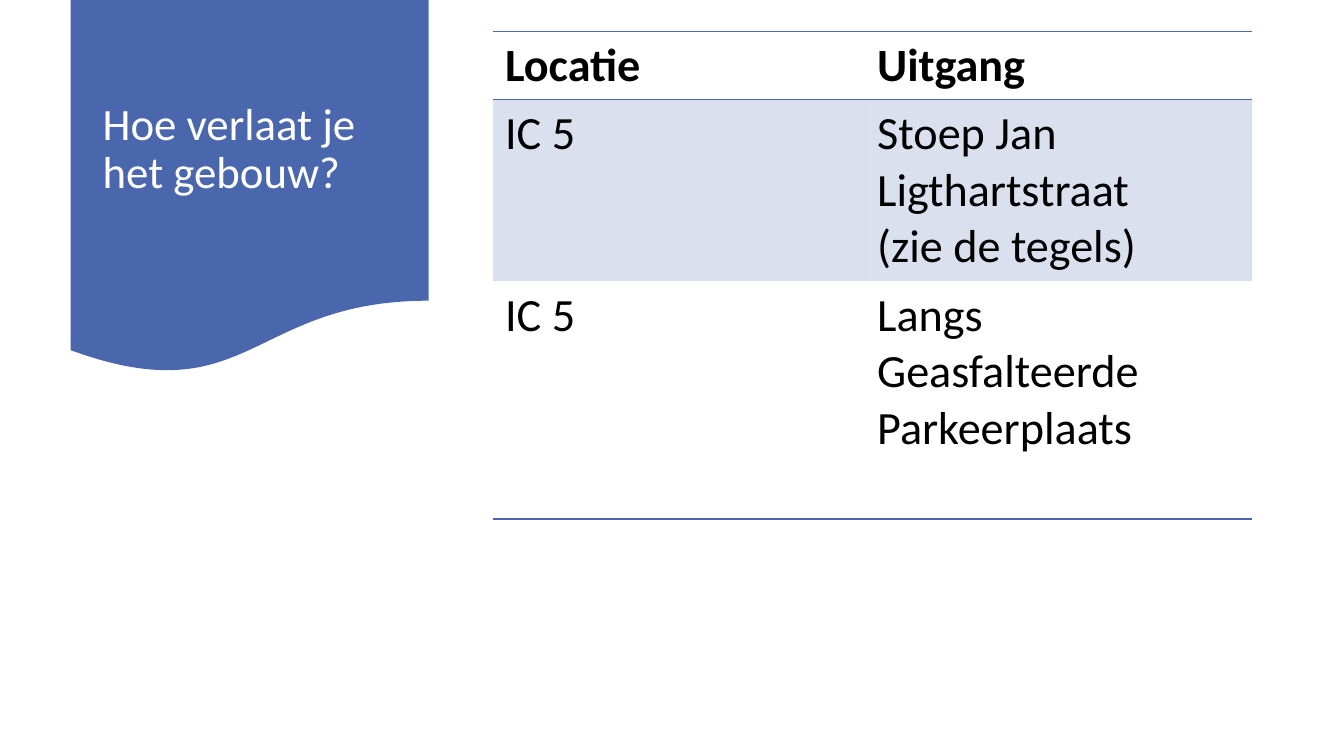
"""Build the slide that tells how to leave the building."""
from dataclasses import dataclass

from lxml import etree
from pptx import Presentation
from pptx.dml.color import RGBColor
from pptx.enum.shapes import MSO_SHAPE
from pptx.enum.text import MSO_ANCHOR
from pptx.oxml.ns import qn
from pptx.slide import Slide
from pptx.table import _Cell
from pptx.text.text import TextFrame
from pptx.util import Emu, Pt

SCALE = 9144
FONT = "Calibri"
NO_STYLE = "{2D5ABB26-0587-4C30-8999-92F81FD0307C}"
WAVE = MSO_SHAPE.FLOWCHART_DOCUMENT
MIDDLE = MSO_ANCHOR.MIDDLE
TOP = MSO_ANCHOR.TOP
HEX = {"blue": "4A66AC", "white": "FFFFFF", "black": "000000"}


@dataclass
class Row:
    height: int
    texts: tuple[str, ...]
    bold: bool = False
    shade: bool = False
    sides: tuple[str, ...] = ()


COLS = (369, 384)
ROWS = (
    Row(68, ("Locatie", "Uitgang"), bold=True, sides=("T", "B")),
    Row(180, ("IC 5", "Stoep Jan Ligthartstraat\n(zie de tegels)"), shade=True),
    Row(236, ("IC 5", "Langs Geasfalteerde Parkeerplaats"), sides=("B",)),
)


def px(*sizes: int) -> list[Emu]:
    """Turn px into EMU."""
    return [Emu(size * SCALE) for size in sizes]


def write(frame: TextFrame, text: str, *, size: int, color: str = "black",
          bold: bool = False, anchor: MSO_ANCHOR = TOP, space: float = 1.0) -> None:
    """Fill a frame with text in one format."""
    frame.text = text
    frame.word_wrap = True
    frame.vertical_anchor = anchor
    for para in frame.paragraphs:
        para.line_spacing = space
        font = para.runs[0].font
        font.name, font.size, font.bold = FONT, Pt(size), bold
        font.color.rgb = RGBColor.from_string(HEX[color])


def border(cell: _Cell, sides: tuple[str, ...]) -> None:
    """Rule the given sides of a cell in blue."""
    props = cell._tc.get_or_add_tcPr()
    for spot, side in enumerate(sides):
        line = etree.Element(qn(f"a:ln{side}"), w=str(Pt(1)))
        fill = etree.SubElement(line, qn("a:solidFill"))
        etree.SubElement(fill, qn("a:srgbClr"), val=HEX["blue"])
        props.insert(spot, line)


def paint(cell: _Cell, shade: bool) -> None:
    """Give a cell a light blue fill or none."""
    if not shade:
        cell.fill.background()
        return
    cell.fill.solid()
    cell.fill.fore_color.rgb = RGBColor.from_string(HEX["blue"])
    color = cell._tc.tcPr.find(f".//{qn('a:srgbClr')}")
    etree.SubElement(color, qn("a:alpha"), val="20000")


def banner(slide: Slide) -> None:
    """Draw the blue wave with the title on it."""
    wave = slide.shapes.add_shape(WAVE, *px(70, 0, 355, 372))
    wave.shadow.inherit = False
    wave.fill.solid()
    wave.fill.fore_color.rgb = RGBColor.from_string(HEX["blue"])
    wave.line.fill.background()
    title = slide.shapes.add_textbox(*px(92, 19, 311, 259))
    write(title.text_frame, "Hoe verlaat je het gebouw?", size=32,
          color="white", anchor=MIDDLE, space=0.9)


def exits(slide: Slide) -> None:
    """Draw the table of places and exits."""
    high = sum(row.height for row in ROWS)
    frame = slide.shapes.add_table(len(ROWS), len(COLS), *px(489, 31, sum(COLS), high))
    table = frame.table
    table._tbl.tblPr.find(qn("a:tableStyleId")).text = NO_STYLE
    for col, width in zip(table.columns, px(*COLS)):
        col.width = width
    for line, row in zip(table.rows, ROWS):
        line.height = px(row.height)[0]
        for cell, text in zip(line.cells, row.texts):
            cell.margin_left, cell.margin_right = px(12, 12)
            cell.margin_top, cell.margin_bottom = px(6, 6)
            write(cell.text_frame, text, size=33, bold=row.bold)
            paint(cell, row.shade)
            border(cell, row.sides)


def main() -> None:
    """Build and save the deck."""
    deck = Presentation()
    deck.slide_width, deck.slide_height = px(1333, 750)
    slide = deck.slides.add_slide(deck.slide_layouts[6])
    banner(slide)
    exits(slide)
    deck.save("out.pptx")


if __name__ == "__main__":
    main()
